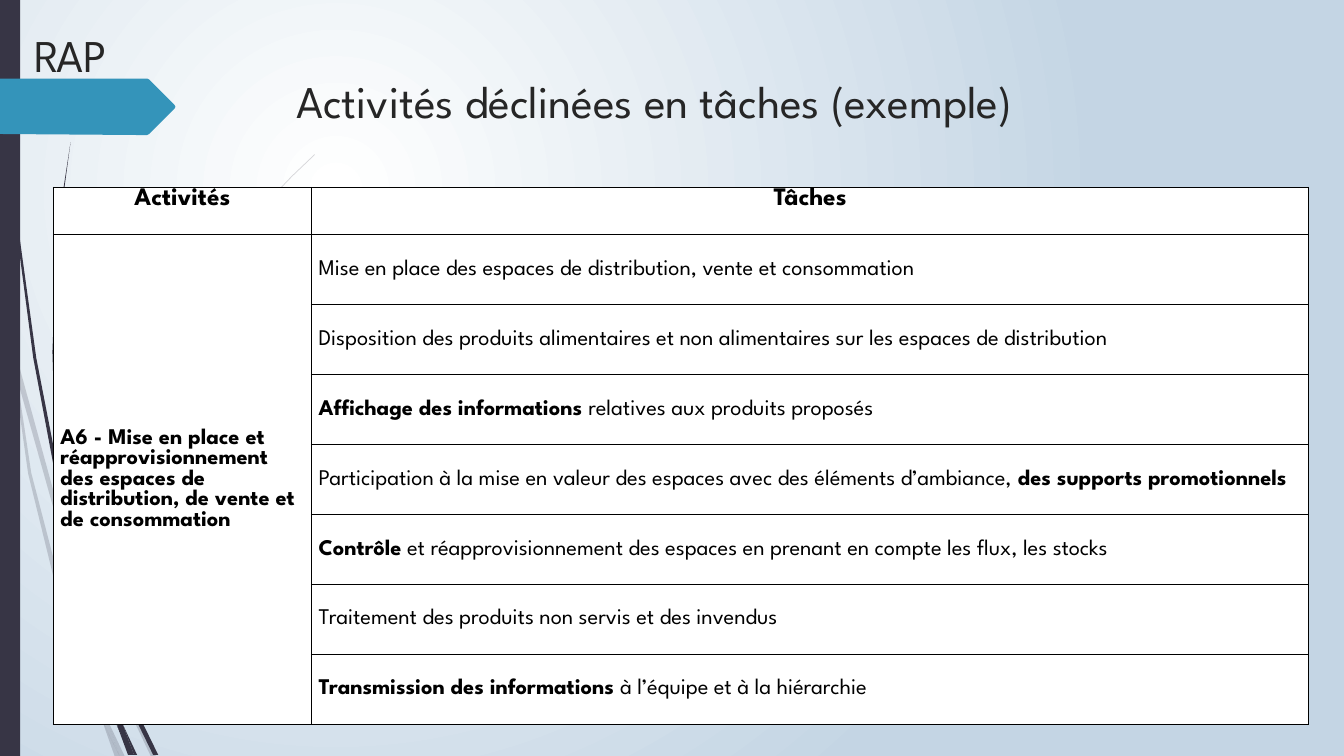
import pptx
import pptx.dml.color
import pptx.enum.shapes
import pptx.enum.text
import pptx.oxml
import pptx.oxml.ns
import pptx.util

RGBColor = pptx.dml.color.RGBColor
ALIGN = pptx.enum.text.PP_ALIGN
ANCHOR = pptx.enum.text.MSO_ANCHOR

SLATE = RGBColor(0x37, 0x35, 0x45)
TEAL = RGBColor(0x34, 0x94, 0xBA)
INK = RGBColor(0x26, 0x26, 0x26)
BLACK = RGBColor(0, 0, 0)
WHITE = RGBColor(0xFF, 0xFF, 0xFF)
MIST = RGBColor(0xC4, 0xD5, 0xE4)
PX = 9144

PALE_STRANDS = [
    [(11, 350), (9, 322), (0, 282), (0, 299), (10, 344)],
    [(58, 522), (84, 599), (85, 586), (62, 520), (14, 345), (17, 376)],
    [(92, 607), (88, 596), (88, 610), (123, 694), (150, 751), (155, 751), (127, 692)],
    [(119, 751), (124, 751), (105, 711)],
    [(93, 683), (70, 619), (31, 469), (17, 376), (11, 350), (28, 470), (65, 621),
     (92, 693), (101, 714), (99, 707)],
    [(84, 599), (87, 646), (93, 683), (96, 692), (105, 711), (103, 706), (91, 646),
     (88, 610), (88, 608)],
    [(88, 584), (110, 462), (160, 349), (229, 245), (268, 198), (290, 175), (312, 154),
     (312, 153), (289, 175), (268, 197), (228, 244), (158, 348), (107, 461), (85, 584),
     (85, 586), (88, 596)],
    [(101, 714), (114, 751), (119, 751)],
    [(88, 608), (88, 610), (88, 596), (85, 586), (84, 599)],
    [(96, 692), (93, 683), (99, 707), (101, 714), (119, 751), (105, 711)],
]
DARK_STRANDS = [
    [(7, 110), (17, 233), (33, 355), (56, 477), (57, 481), (55, 457), (55, 453),
     (36, 355), (19, 232), (8, 109), (5, 48), (4, 0), (3, 0), (4, 48)],
    [(88, 592), (106, 645), (106, 633), (106, 631), (93, 590), (60, 472), (64, 505)],
    [(113, 649), (110, 641), (111, 656), (132, 708), (152, 749), (157, 749), (136, 706)],
    [(110, 691), (98, 657), (72, 556), (64, 505), (57, 477), (68, 557), (93, 659),
     (111, 708), (117, 722), (116, 717)],
    [(60, 472), (58, 453), (54, 349), (58, 245), (63, 193), (70, 141), (62, 193),
     (56, 245), (52, 349), (55, 449)],
    [(133, 749), (136, 749), (122, 719)],
    [(57, 477), (64, 505), (60, 472), (55, 449), (55, 453)],
    [(111, 633), (125, 552), (158, 476), (205, 406), (231, 374), (245, 359), (261, 344),
     (260, 344), (245, 358), (231, 373), (204, 405), (156, 474), (122, 551), (106, 631),
     (110, 641)],
    [(117, 722), (127, 749), (131, 749)],
    [(106, 645), (110, 691), (116, 706), (122, 719), (121, 716), (111, 656), (109, 651)],
    [(106, 645), (109, 651), (111, 656), (110, 641), (106, 631), (106, 633)],
    [(116, 706), (110, 691), (116, 717), (117, 722), (130, 749), (133, 749), (122, 719)],
]
ARROW = [(0, 78), (146, 78), (148, 79), (173, 104), (174, 106), (173, 108),
         (148, 133), (146, 134), (136, 134), (0, 133)]

ACTIVITY = ("A6 - Mise en place et réapprovisionnement des espaces de distribution, "
            "de vente et de consommation")
TASKS = [
    [("Mise en place des espaces de distribution, vente et consommation", False)],
    [("Disposition des produits alimentaires et non alimentaires sur les espaces de distribution",
      False)],
    [("Affichage des informations ", True), ("relatives aux produits proposés", False)],
    [("Participation à la mise en valeur des espaces avec des éléments d’ambiance, ", False),
     ("des supports promotionnels", True)],
    [("Contrôle", True),
     (" et réapprovisionnement des espaces en prenant en compte les flux, les stocks", False)],
    [("Traitement des produits non servis et des invendus", False)],
    [("Transmission des informations ", True), ("à l’équipe et à la hiérarchie", False)],
]


def emu(px):
    return pptx.util.Emu(round(px * PX))


class Deck:
    font = "League Spartan"

    def __init__(self, width, height):
        self.presentation = pptx.Presentation()
        self.presentation.slide_width = emu(width)
        self.presentation.slide_height = emu(height)
        self.slide = self.presentation.slides.add_slide(self.presentation.slide_layouts[6])

    def background(self, inner, outer):
        self.slide.element.cSld.insert(0, pptx.oxml.parse_xml(
            f'<p:bg {pptx.oxml.ns.nsdecls("p", "a")}><p:bgPr><a:gradFill rotWithShape="1">'
            f'<a:gsLst><a:gs pos="0"><a:srgbClr val="{inner}"/></a:gs>'
            f'<a:gs pos="100000"><a:srgbClr val="{outer}"/></a:gs></a:gsLst>'
            '<a:path path="circle"><a:fillToRect l="50000" t="50000" r="100000" b="100000"/>'
            '</a:path></a:gradFill><a:effectLst/></p:bgPr></p:bg>'))

    def paint(self, shape, color, opacity=100):
        shape.shadow.inherit = False
        shape.line.fill.background()
        shape.fill.solid()
        shape.fill.fore_color.rgb = color
        if opacity < 100:
            tint = shape.element.spPr.find(".//" + pptx.oxml.ns.qn("a:srgbClr"))
            tint.append(pptx.oxml.parse_xml(
                f'<a:alpha {pptx.oxml.ns.nsdecls("a")} val="{opacity * 1000}"/>'))

    def outline(self, points, color, opacity=100, shapes=None):
        builder = (shapes or self.slide.shapes).build_freeform(*points[0], scale=PX)
        builder.add_line_segments(points[1:], close=True)
        self.paint(builder.convert_to_shape(), color, opacity)

    def wisps(self, strands, color, opacity=100):
        group = self.slide.shapes.add_group_shape()
        for points in strands:
            self.outline(points, color, opacity, group.shapes)

    def bar(self, left, top, width, height, color):
        self.paint(self.slide.shapes.add_shape(
            pptx.enum.shapes.MSO_SHAPE.RECTANGLE, *map(emu, (left, top, width, height))), color)

    def add_runs(self, paragraph, runs, size, color):
        for words, bold in runs:
            run = paragraph.add_run()
            run.text = words
            run.font.name = self.font
            run.font.size = pptx.util.Pt(size)
            run.font.bold = bold
            run.font.color.rgb = color

    def heading(self, words, left, top, width, height):
        frame = self.slide.shapes.add_textbox(*map(emu, (left, top, width, height))).text_frame
        frame.word_wrap = True
        self.add_runs(frame.paragraphs[0], [(words, False)], 32.4, INK)

    def table(self, left, top, widths, heights):
        table = self.slide.shapes.add_table(
            len(heights), len(widths),
            *map(emu, (left, top, sum(widths), sum(heights)))).table
        table.first_row = table.horz_banding = False
        for column, width in zip(table.columns, widths):
            column.width = emu(width)
        for row, height in zip(table.rows, heights):
            row.height = emu(height)
        for cell in table.iter_cells():
            self.frame_cell(cell)
        return table

    def frame_cell(self, cell):
        cell.margin_left = cell.margin_right = emu(7)
        cell.margin_top = cell.margin_bottom = 0
        properties = cell._tc.get_or_add_tcPr()
        for side in "LRTB":
            properties.append(pptx.oxml.parse_xml(
                f'<a:ln{side} {pptx.oxml.ns.nsdecls("a")} w="12700"><a:solidFill>'
                f'<a:srgbClr val="{BLACK}"/></a:solidFill></a:ln{side}>'))
        cell.fill.solid()
        cell.fill.fore_color.rgb = WHITE

    def fill_cell(self, cell, runs, size=16, align=ALIGN.LEFT, anchor=ANCHOR.MIDDLE, spacing=0):
        cell.vertical_anchor = anchor
        paragraph = cell.text_frame.paragraphs[0]
        paragraph.alignment = align
        paragraph.space_before = paragraph.space_after = pptx.util.Pt(spacing)
        self.add_runs(paragraph, runs, size, BLACK)


def main():
    deck = Deck(1333, 750)
    deck.background(WHITE, MIST)
    deck.wisps(PALE_STRANDS, SLATE, 20)
    deck.wisps(DARK_STRANDS, SLATE)
    deck.bar(0, 0, 20, 750, SLATE)
    deck.outline(ARROW, TEAL)
    deck.heading("Activités déclinées en tâches (exemple)", 284, 68, 975, 86)

    heights = [47] + [486 / len(TASKS)] * len(TASKS)
    table = deck.table(53, 186, [256, 989], heights)
    for column, label in enumerate(["Activités", "Tâches"]):
        deck.fill_cell(table.cell(0, column), [(label, True)], 18, ALIGN.CENTER, ANCHOR.TOP)
    table.cell(1, 0).merge(table.cell(len(TASKS), 0))
    deck.fill_cell(table.cell(1, 0), [(ACTIVITY, True)])
    for row, task in enumerate(TASKS, start=1):
        deck.fill_cell(table.cell(row, 1), task, spacing=6)

    deck.heading("RAP", 24, 22, 130, 53)
    deck.presentation.save("out.pptx")


if __name__ == "__main__":
    main()
